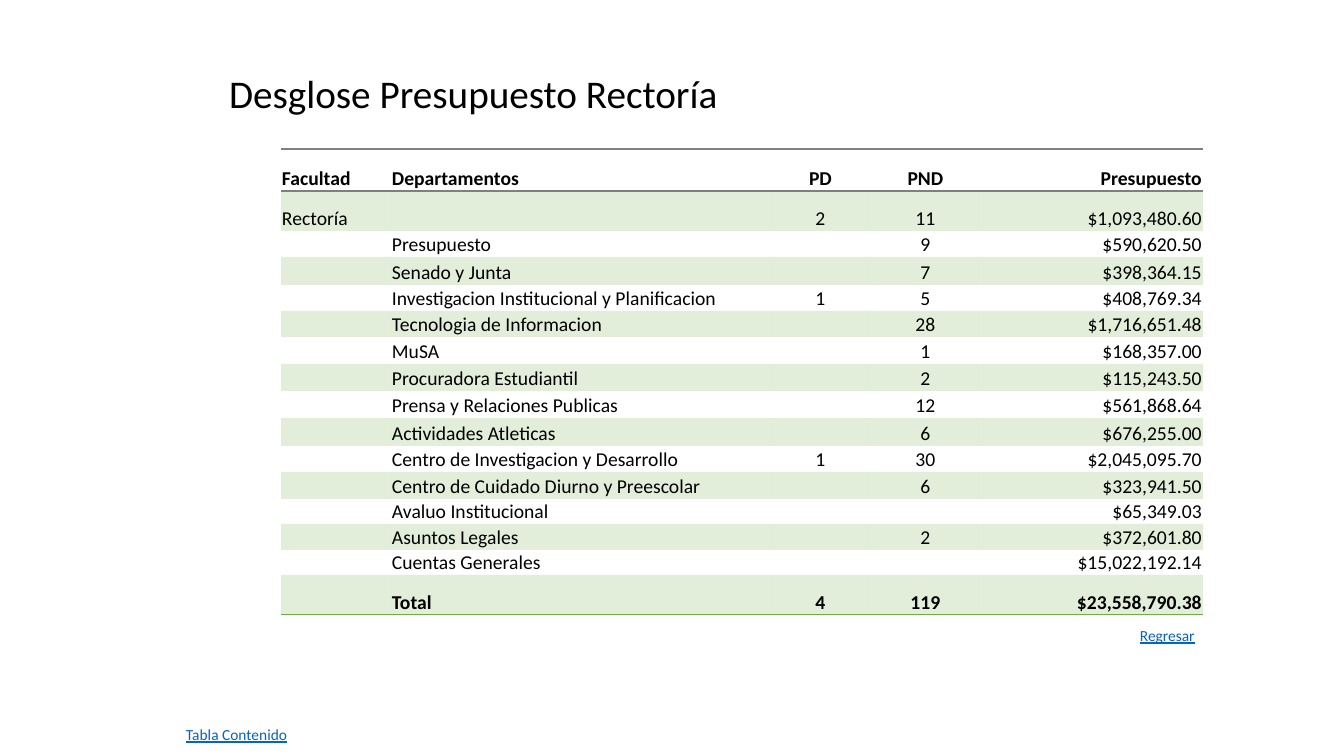
from dataclasses import dataclass

from lxml import etree
from pptx import Presentation
from pptx.dml.color import RGBColor
from pptx.enum.text import MSO_ANCHOR, MSO_AUTO_SIZE, PP_ALIGN
from pptx.oxml.ns import qn
from pptx.util import Emu, Pt

LEFT, CENTER, RIGHT = PP_ALIGN.LEFT, PP_ALIGN.CENTER, PP_ALIGN.RIGHT
TOP, BOTTOM = MSO_ANCHOR.TOP, MSO_ANCHOR.BOTTOM
FIT_SHAPE = MSO_AUTO_SIZE.SHAPE_TO_FIT_TEXT

EMU_PER_PX = 914400 / 100.8
TITLE_ONLY = 5
NO_STYLE_NO_GRID = "{2D5ABB26-0587-4C30-8999-92F81FD0307C}"


@dataclass(frozen=True)
class Theme:
    font: str = "Calibri"
    text: str = "000000"
    link: str = "0563C1"
    accent: str = "70AD47"
    header_line: str = "7F7F7F"
    band_opacity: int = 20
    title_size: int = 28
    table_size: int = 14
    link_size: int = 11
    line_width: int = 1


THEME = Theme()

COLUMN_WIDTHS = (110, 383, 93, 117, 219)
ALIGNMENTS = (LEFT, LEFT, CENTER, CENTER, RIGHT)
ROW_HEIGHTS = (42, 40, 26, 28, 26, 26, 27, 27, 27, 28, 26, 27, 25, 26, 25, 40)
BUDGET_ROWS = (
    ("Facultad", "Departamentos", "PD", "PND", "Presupuesto"),
    ("Rectoría", "", "2", "11", "$1,093,480.60"),
    ("", "Presupuesto", "", "9", "$590,620.50"),
    ("", "Senado y Junta", "", "7", "$398,364.15"),
    ("", "Investigacion Institucional y Planificacion", "1", "5", "$408,769.34"),
    ("", "Tecnologia de Informacion", "", "28", "$1,716,651.48"),
    ("", "MuSA", "", "1", "$168,357.00"),
    ("", "Procuradora Estudiantil", "", "2", "$115,243.50"),
    ("", "Prensa y Relaciones Publicas", "", "12", "$561,868.64"),
    ("", "Actividades Atleticas", "", "6", "$676,255.00"),
    ("", "Centro de Investigacion y Desarrollo", "1", "30", "$2,045,095.70"),
    ("", "Centro de Cuidado Diurno y Preescolar", "", "6", "$323,941.50"),
    ("", "Avaluo Institucional", "", "", "$65,349.03"),
    ("", "Asuntos Legales", "", "2", "$372,601.80"),
    ("", "Cuentas Generales", "", "", "$15,022,192.14"),
    ("", "Total", "4", "119", "$23,558,790.38"),
)


def px(value):
    return Emu(round(value * EMU_PER_PX))


def set_attributes(target, values):
    for name, value in values.items():
        setattr(target, name, value)


def write(paragraph, text, size, color=THEME.text, align=LEFT, bold=False, underline=False):
    paragraph.alignment = align
    if not text:
        # Keeps an empty cell from taking the taller default line height.
        end = etree.SubElement(paragraph._p, qn("a:endParaRPr"))
        end.set("sz", str(size * 100))
        return
    run = paragraph.add_run()
    run.text = text
    set_attributes(run.font, {
        "name": THEME.font, "size": Pt(size), "bold": bold, "underline": underline,
    })
    run.font.color.rgb = RGBColor.from_string(color)


def format_frame(text_frame):
    set_attributes(text_frame, {
        "word_wrap": False, "auto_size": FIT_SHAPE, "vertical_anchor": TOP,
    })


def add_title(slide, text, left, top, width, height):
    title = slide.shapes.title
    set_attributes(title, {
        "left": px(left), "top": px(top), "width": px(width), "height": px(height),
    })
    format_frame(title.text_frame)
    write(title.text_frame.paragraphs[0], text, THEME.title_size)


def add_link_label(slide, text, left, top, width, height):
    label = slide.shapes.add_textbox(px(left), px(top), px(width), px(height))
    format_frame(label.text_frame)
    write(label.text_frame.paragraphs[0], text, THEME.link_size, THEME.link, underline=True)


def add_border(cell, tag, color):
    line = etree.Element(qn(tag), w=str(Pt(THEME.line_width)))
    fill = etree.SubElement(line, qn("a:solidFill"))
    etree.SubElement(fill, qn("a:srgbClr"), val=color)
    cell._tc.get_or_add_tcPr().insert(0, line)


def fill_band(cell):
    cell.fill.solid()
    cell.fill.fore_color.rgb = RGBColor.from_string(THEME.accent)
    color = cell._tc.tcPr.find(".//" + qn("a:srgbClr"))
    etree.SubElement(color, qn("a:alpha"), val=str(THEME.band_opacity * 1000))


def format_cell(cell, row, last_row):
    set_attributes(cell, {
        "margin_left": px(1), "margin_right": px(1), "margin_top": px(1),
        "margin_bottom": 0, "vertical_anchor": BOTTOM,
    })
    if row % 2:
        fill_band(cell)
    else:
        cell.fill.background()
    if row == 0:
        add_border(cell, "a:lnB", THEME.header_line)
        add_border(cell, "a:lnT", THEME.header_line)
    elif row == last_row:
        add_border(cell, "a:lnB", THEME.accent)


def add_budget_table(slide, left, top):
    last_row = len(BUDGET_ROWS) - 1
    frame = slide.shapes.add_table(
        len(BUDGET_ROWS), len(COLUMN_WIDTHS), px(left), px(top),
        px(sum(COLUMN_WIDTHS)), px(sum(ROW_HEIGHTS)))
    table = frame.table
    set_attributes(table, {"first_row": False, "horz_banding": False})
    table._tbl.tblPr.find(qn("a:tableStyleId")).text = NO_STYLE_NO_GRID
    for column, width in zip(table.columns, COLUMN_WIDTHS):
        column.width = px(width)
    for row, (height, texts) in enumerate(zip(ROW_HEIGHTS, BUDGET_ROWS)):
        table.rows[row].height = px(height)
        for column, (text, align) in enumerate(zip(texts, ALIGNMENTS)):
            cell = table.cell(row, column)
            format_cell(cell, row, last_row)
            write(cell.text_frame.paragraphs[0], text, THEME.table_size,
                  align=align, bold=row in (0, last_row))


def main():
    presentation = Presentation()
    set_attributes(presentation, {"slide_width": px(1344), "slide_height": px(756)})
    slide = presentation.slides.add_slide(presentation.slide_layouts[TITLE_ONLY])
    add_budget_table(slide, 281, 149)
    add_title(slide, "Desglose Presupuesto Rectoría", 219, 64, 514, 57)
    add_link_label(slide, "Regresar", 1130, 621, 76, 29)
    add_link_label(slide, "Tabla Contenido", 176, 720, 123, 29)
    presentation.save("out.pptx")


if __name__ == "__main__":
    main()
